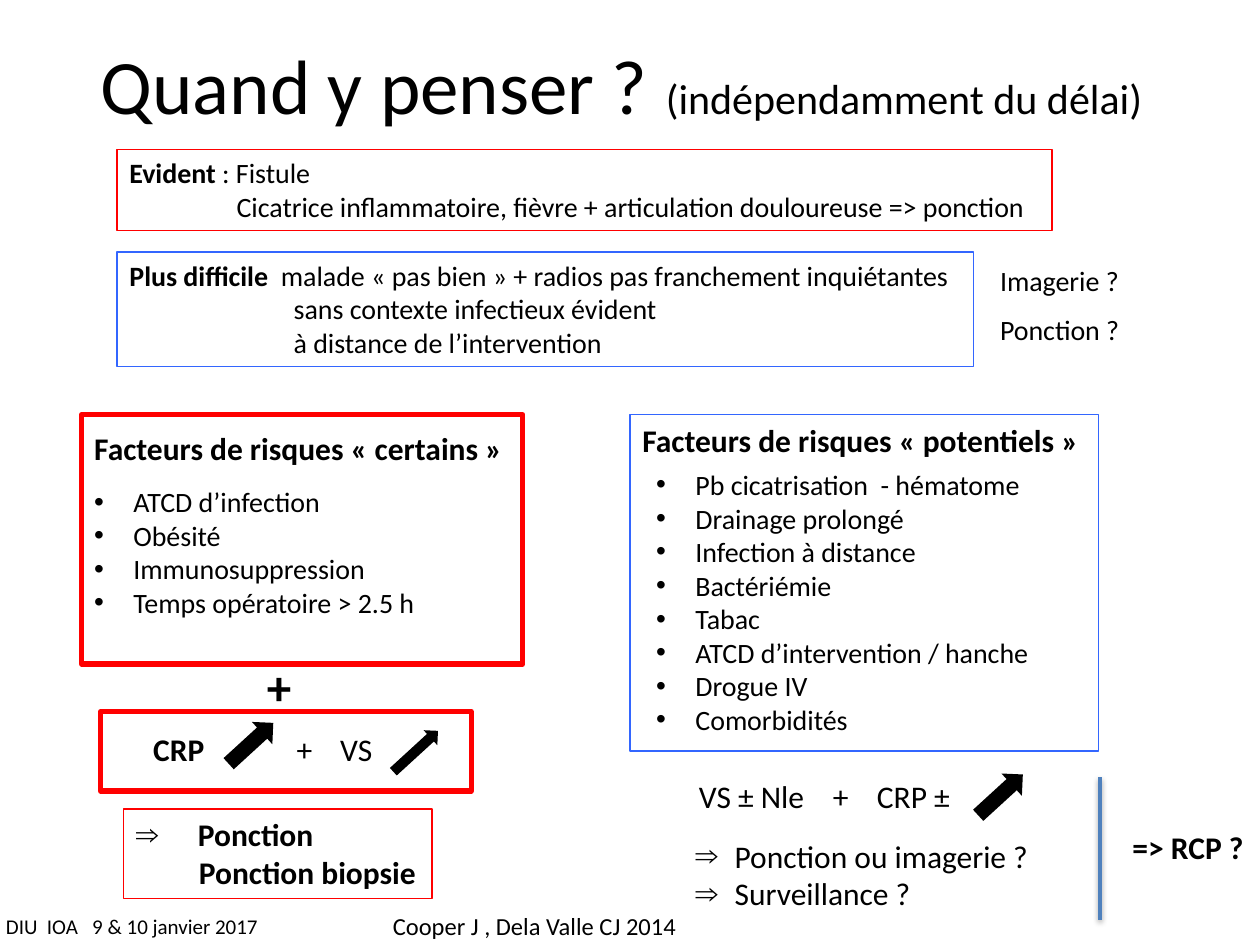
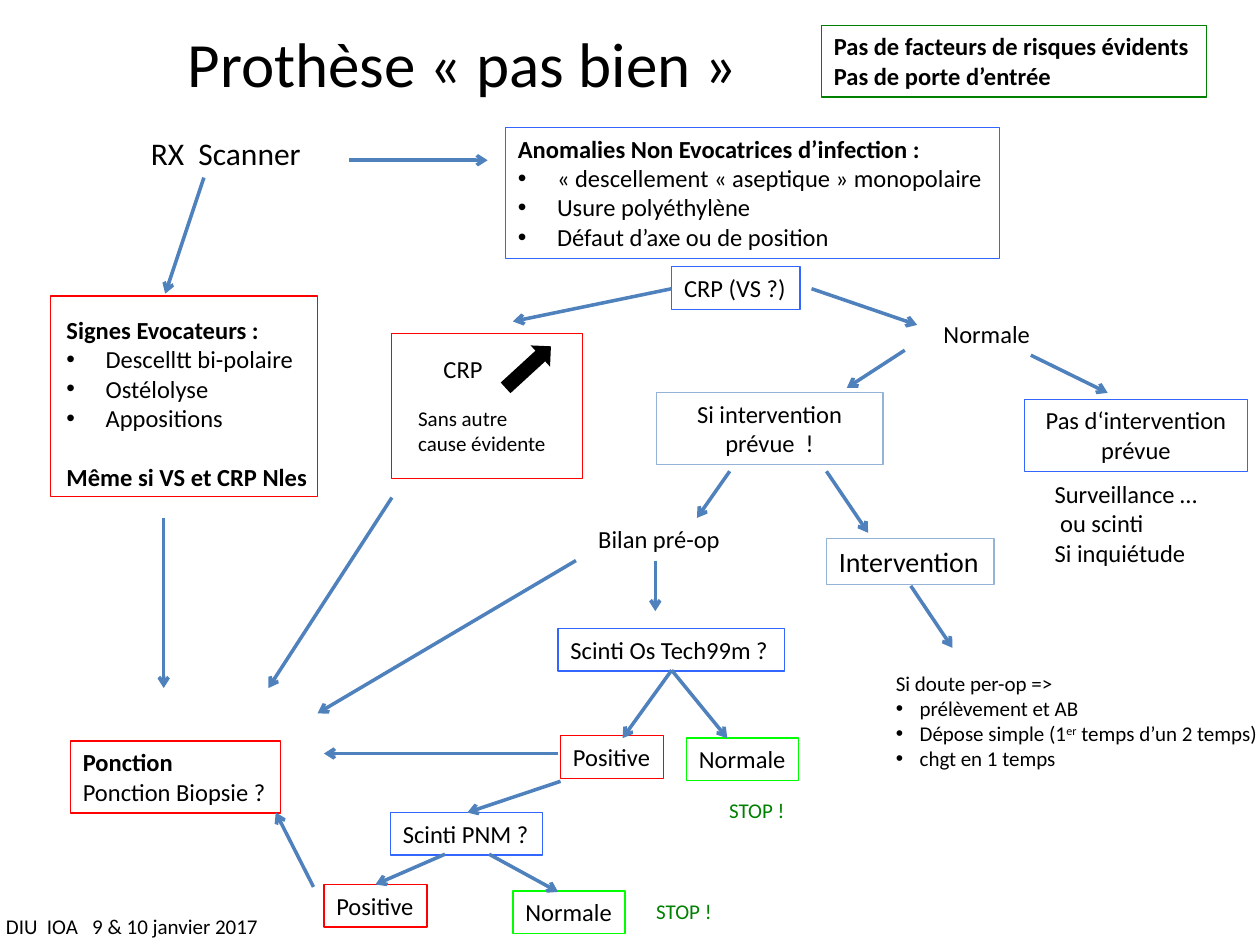
from pptx import Presentation
from pptx.dml.color import RGBColor
from pptx.enum.shapes import MSO_CONNECTOR, MSO_SHAPE
from pptx.enum.text import MSO_ANCHOR, PP_ALIGN
from pptx.oxml import parse_xml
from pptx.oxml.ns import nsdecls
from pptx.util import Cm, Pt

BLACK = RGBColor(0x00, 0x00, 0x00)
RED = RGBColor(0xFF, 0x00, 0x00)
BLUE = RGBColor(0x33, 0x66, 0xFF)
PALE_BLUE = RGBColor(0x95, 0xB3, 0xD7)
STEEL = RGBColor(0x4F, 0x81, 0xBD)
LIME = RGBColor(0x00, 0xFF, 0x00)
GREEN = RGBColor(0x00, 0x80, 0x00)

FONT = "Calibri"
FOOTER = "DIU  IOA   9 & 10 janvier 2017"
SHADOW = ('<a:outerShdw blurRad="40000" dist="20000" dir="5400000" rotWithShape="0">'
          '<a:srgbClr val="000000"><a:alpha val="38000"/></a:srgbClr></a:outerShdw>')


def xml(tag, attrs="", inner=""):
    return parse_xml(f'<a:{tag} {nsdecls("a")} {attrs}>{inner}</a:{tag}>')


def bold(text):
    return text, {"bold": True}


def para(*runs, bullet="", indent=0, before=0, tabs=()):
    """One paragraph; a bullet hangs in the indent."""
    return {"runs": runs, "bullet": bullet, "indent": indent,
            "before": before, "tabs": tabs}


def bullets(*lines, mark="•", indent=0.79):
    return [para(line, bullet=mark, indent=indent) for line in lines]


class Deck:
    def __init__(self):
        self.prs = Presentation()
        self.prs.slide_width, self.prs.slide_height = Cm(25.4), Cm(19.05)
        self.s = None

    def slide(self):
        self.s = self.prs.slides.add_slide(self.prs.slide_layouts[6])
        self.text((-0.13, 18.29, 5.66, 1.27), FOOTER, size=12)

    def title(self, box, *runs, size):
        self.text(box, para(*runs), size=size, align=PP_ALIGN.CENTER,
                  anchor=MSO_ANCHOR.MIDDLE)

    def text(self, box, *paras, **style):
        sp = self.s.shapes.add_textbox(*map(Cm, box))
        self.fill_text(sp.text_frame, paras, **style)

    def box(self, box, line, *paras, width=0.75, **style):
        sp = self.s.shapes.add_shape(MSO_SHAPE.RECTANGLE, *map(Cm, box))
        sp.shadow.inherit = False
        sp.fill.background()
        sp.line.color.rgb = line
        sp.line.width = Pt(width)
        if paras:
            self.fill_text(sp.text_frame, paras, **style)

    def rise(self, x, y, w=1.22, h=0.61):
        """Black block arrow pointing up and right."""
        sp = self.s.shapes.add_shape(MSO_SHAPE.RIGHT_ARROW, *map(Cm, (x, y, w, h)))
        sp.shadow.inherit = False
        sp.fill.solid()
        sp.fill.fore_color.rgb = BLACK
        sp.line.fill.background()
        sp.rotation = 317.5

    def line(self, x1, y1, x2, y2, arrow=True, shadow=""):
        cx = self.s.shapes.add_connector(MSO_CONNECTOR.STRAIGHT,
                                         *map(Cm, (x1, y1, x2, y2)))
        cx.line.color.rgb = STEEL
        cx.line.width = Pt(2)
        if arrow:
            cx.line._get_or_add_ln().append(xml("tailEnd", 'type="arrow"'))
        cx._element.spPr.append(xml("effectLst", inner=shadow))

    def fill_text(self, tf, paras, size=14, color=BLACK, align=PP_ALIGN.LEFT,
                  anchor=MSO_ANCHOR.TOP, **fmt):
        tf.word_wrap = True
        tf.vertical_anchor = anchor
        if align == PP_ALIGN.LEFT:
            tf.margin_right = 0
        base = {"name": FONT, "size": Pt(size), "bold": False, **fmt}
        for i, item in enumerate(paras):
            item = para(item) if isinstance(item, (str, tuple)) else item
            p = tf.paragraphs[0] if i == 0 else tf.add_paragraph()
            p.alignment = align
            self.layout(p, item)
            for run in item["runs"]:
                words, extra = (run, {}) if isinstance(run, str) else run
                r = p.add_run()
                r.text = words
                r.font.color.rgb = color
                for key, value in {**base, **extra}.items():
                    if key == "baseline":
                        r._r.get_or_add_rPr().set(key, value)
                    else:
                        setattr(r.font, key, value)

    def layout(self, p, item):
        pPr = p._p.get_or_add_pPr()
        if item["before"]:
            p.space_before = Pt(item["before"])
        if item["indent"]:
            pPr.set("marL", str(Cm(item["indent"])))
        if item["bullet"]:
            pPr.set("indent", str(-Cm(item["indent"])))
            pPr.append(xml("buFont", 'typeface="Arial"'))
            pPr.append(xml("buChar", f'char="{item["bullet"]}"'))
        if item["tabs"]:
            stops = "".join(f'<a:tab pos="{Cm(t)}" algn="l"/>' for t in item["tabs"])
            pPr.append(xml("tabLst", inner=stops))


def when_to_suspect(d):
    d.slide()
    d.title((1.1, 0.56, 22.86, 2.26), "Quand y penser ? ",
            ("(indépendamment du délai)", {"size": Pt(24)}), size=44)

    # Clinical situations
    d.box((2.36, 3.02, 18.85, 1.63), RED,
          para(bold("Evident "), ": Fistule"),
          para("Cicatrice inflammatoire, fièvre + articulation douloureuse => ponction",
               indent=2.16), size=16)
    d.box((2.36, 5.08, 17.27, 2.31), BLUE,
          para(bold("Plus difficile"),
               "  malade «\u00a0pas bien\u00a0» + radios pas franchement inquiétantes"),
          para("sans contexte infectieux évident", indent=3.31),
          para("à distance de l’intervention", indent=3.31), size=16)
    for y, question in ((5.18, "Imagerie ?"), (6.17, "Ponction ?")):
        d.text((19.91, y, 2.95, 0.94), question, size=16)

    # Certain risk factors
    d.box((1.65, 8.36, 8.89, 5.03), RED, width=3)
    d.text((1.65, 8.53, 8.89, 1.02), "Facteurs de risques «\u00a0certains\u00a0»",
           size=18, bold=True)
    d.text((1.65, 9.65, 7.06, 3),
           *bullets("ATCD d’infection", "Obésité", "Immunosuppression",
                    "Temps opératoire > 2.5 h"), size=16)
    d.text((5.13, 13.11, 1.02, 1.45), "+", size=28, bold=True)
    d.box((2.03, 14.35, 7.47, 1.6), RED, width=3)
    d.text((2.84, 14.6, 4.98, 1.02),
           para(bold("CRP"), "\t+\tVS", tabs=(2.89, 3.77)), size=18)
    d.rise(4.45, 14.68)
    d.rise(7.77, 14.94, h=0.41)
    d.box((2.49, 16.31, 6.22, 1.8), RED,
          *bullets("Ponction", mark="⇒", indent=1.25),
          para("Ponction biopsie", indent=1.27), size=18, bold=True)

    # Potential risk factors
    d.box((12.7, 8.36, 9.45, 6.78), BLUE)
    d.text((12.7, 8.36, 9.37, 0.91), "Facteurs de risques «\u00a0potentiels\u00a0»",
           size=18, bold=True)
    d.text((12.98, 9.3, 8.08, 5.11),
           *bullets("Pb cicatrisation  - hématome", "Drainage prolongé",
                    "Infection à distance", "Bactériémie", "Tabac",
                    "ATCD d’intervention / hanche", "Drogue IV", "Comorbidités"),
           size=16)
    d.text((13.84, 15.54, 5.61, 1.02),
           para("VS ± Nle\t+\tCRP ±", tabs=(2.7, 3.59)), size=18)
    d.rise(19.56, 15.72)
    d.text((13.77, 16.74, 7.29, 1.8),
           *bullets("Ponction ou imagerie ?", "Surveillance ?", mark="⇒"), size=18)
    d.line(22.17, 15.67, 22.17, 18.54, arrow=False, shadow=SHADOW)
    d.text((22.58, 16.56, 2.77, 1.02), "=> RCP ?", size=18, bold=True)

    # Reference
    d.text((7.67, 18.24, 6.3, 0.86), "Cooper J , Dela Valle CJ 2014")


def decision_tree(d):
    d.slide()
    d.title((-0.1, 0.18, 18.85, 2.16), "Prothèse «\u00a0pas bien\u00a0»", size=36)
    d.box((16.56, 0.51, 7.77, 1.45), GREEN, "Pas de facteurs de risques évidents",
          "Pas de porte d’entrée", bold=True)

    # Imaging
    d.text((2.79, 2.57, 3.58, 1.02), "RX  Scanner", size=18)
    d.box((10.19, 2.57, 9.96, 2.64), BLUE,
          bold("Anomalies Non Evocatrices d’infection :"),
          *bullets("«\u00a0descellement «\u00a0aseptique\u00a0» monopolaire",
                   "Usure polyéthylène", "Défaut d’axe ou de position"))
    d.box((1.02, 5.97, 5.38, 4.04), RED)
    d.text((1.09, 6.22, 5.44, 3.84), bold("Signes Evocateurs :"),
           *bullets("Descelltt bi-polaire", "Ostélolyse", "Appositions"),
           para(bold("Même si VS et CRP Nles"), before=17))

    # Raised CRP
    d.box((7.9, 6.73, 3.84, 2.92), RED)
    d.text((8.69, 7.01, 1.3, 0.86), "CRP")
    d.rise(10.03, 7.11, 1.24, 0.58)
    d.text((8.18, 8.05, 3.05, 1.27), "Sans autre cause évidente", size=12)

    # Normal CRP
    d.text((18.77, 6.3, 2.26, 0.86), "Normale")
    d.box((13.23, 7.92, 4.57, 1.45), PALE_BLUE, "Si intervention prévue  !",
          align=PP_ALIGN.CENTER)
    d.box((20.65, 8.05, 4.5, 1.45), BLUE, "Pas d‘intervention prévue",
          align=PP_ALIGN.CENTER)
    d.text((21.01, 9.53, 4.09, 2.06), "Surveillance …", " ou scinti", "Si inquiétude")
    d.text((11.81, 10.44, 3, 0.86), "Bilan pré-op")
    d.box((16.66, 10.85, 3.38, 0.94), PALE_BLUE, "Intervention", size=16)
    d.text((17.81, 13.39, 8.05, 2.31), "Si doute per-op =>",
           *bullets("prélèvement et AB", indent=0.48),
           para("Dépose simple (1", ("er", {"baseline": "30000"}),
                " temps d’un 2 temps)", bullet="•", indent=0.48),
           *bullets("chgt en 1 temps", indent=0.48), size=12)

    # Tests and their results
    for x, y, w, color, label in (
            (13.54, 5.38, 2.59, BLUE, "CRP (VS ?)"),
            (11.25, 12.67, 4.57, BLUE, "Scinti Os Tech99m ?"),
            (7.87, 16.38, 3.07, BLUE, "Scinti PNM ?"),
            (11.3, 14.83, 2.08, RED, "Positive"),
            (6.53, 17.83, 2.08, RED, "Positive"),
            (13.84, 14.88, 2.26, LIME, "Normale"),
            (10.34, 17.96, 2.26, LIME, "Normale")):
        d.box((x, y, w, 0.86), color, label)
    for x, y in ((14.45, 15.95), (12.98, 17.98)):
        d.text((x, y, 2, 0.76), "STOP !", size=12, color=GREEN)
    d.box((1.42, 14.94, 4.24, 1.45), RED, bold("Ponction"), "Ponction Biopsie ?")

    # Arrows
    for ends in (
            # from imaging and CRP
            (4.11, 3.58, 3.33, 5.92), (7.04, 3.23, 9.83, 3.23),
            (13.54, 5.82, 10.34, 6.48), (16.36, 5.82, 18.49, 6.55),
            # from a normal CRP
            (18.24, 7.06, 17.07, 7.82), (20.78, 7.16, 22.33, 7.92),
            (14.71, 9.5, 14.05, 10.44), (16.66, 9.5, 17.5, 10.74),
            (18.36, 11.81, 19.2, 13.06), (13.21, 11.3, 13.21, 12.32),
            # from the scintigraphies
            (13.54, 13.51, 12.55, 14.88), (13.54, 13.51, 14.66, 14.88),
            (11.3, 15.75, 9.42, 16.38),
            (8.97, 17.22, 7.57, 17.83), (9.86, 17.22, 11.25, 17.98),
            # to the puncture
            (3.3, 10.44, 3.3, 13.87), (7.9, 10.03, 5.41, 13.87),
            (11.61, 11.3, 6.4, 14.38), (11.25, 15.19, 6.53, 15.19),
            (6.32, 17.88, 5.56, 16.38)):
        d.line(*ends)


def main():
    d = Deck()
    when_to_suspect(d)
    decision_tree(d)
    d.prs.save("out.pptx")


if __name__ == "__main__":
    main()
